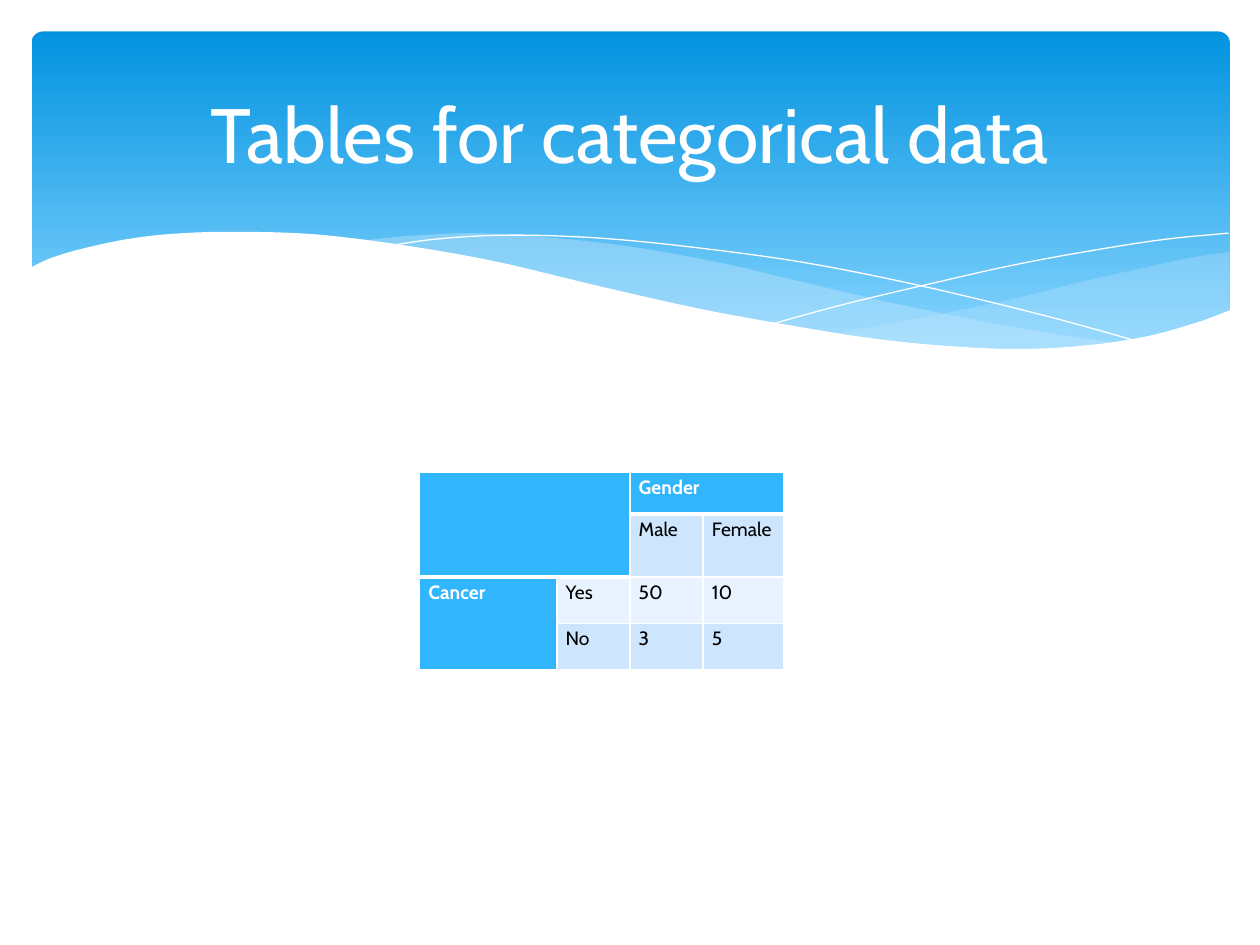
import pptx
import pptx.dml.color
import pptx.enum.dml
import pptx.enum.shapes
import pptx.enum.text
import pptx.oxml.ns
import pptx.util
from lxml import etree

Inches = pptx.util.Inches
Pt = pptx.util.Pt
qn = pptx.oxml.ns.qn

COLORS = {
    "white": "FFFFFF",
    "black": "000000",
    "banner_top": "0293E0",
    "banner_bottom": "83D3FE",
    "ribbon": "C6E7FC",
    "header": "31B6FD",
    "band": "CEE5FE",
    "light_band": "E8F3FF",
}
FONT = "Cabin"

RIGHT_RIBBON_TOP = [(6.61, 2.65), (7.06, 2.57), (7.53, 2.48), (8.05, 2.37),
                    (8.61, 2.23), (9.06, 2.13), (9.48, 2.04), (9.76, 2)]
RIGHT_RIBBON_BOTTOM = [(6.61, 2.65), (7.05, 2.71), (7.57, 2.76), (8.03, 2.78),
                       (8.54, 2.76), (8.97, 2.7), (9.35, 2.62), (9.76, 2.47)]
LONG_RIBBON_TOP = [(2.86, 1.91), (3.28, 1.87), (3.8, 1.85), (4.42, 1.89), (5.02, 1.96),
                   (5.69, 2.08), (6.29, 2.22), (7.06, 2.4), (7.75, 2.54), (8.37, 2.65), (8.93, 2.73)]
LONG_RIBBON_BOTTOM = [(2.86, 1.91), (3.42, 1.99), (4.04, 2.11), (4.91, 2.32), (5.66, 2.48),
                      (6.34, 2.61), (6.95, 2.7), (7.48, 2.76), (8.07, 2.78), (8.57, 2.77), (8.93, 2.73)]
FALLING_STRAND = [(3.09, 1.95), (3.44, 1.9), (3.87, 1.87), (4.33, 1.87), (4.89, 1.9), (5.56, 1.97),
                  (6.36, 2.08), (7.27, 2.26), (8.31, 2.51), (9.07, 2.72)]
RISING_STRAND = [(6.13, 2.57), (6.72, 2.41), (7.48, 2.23), (8.06, 2.1),
                 (8.66, 1.99), (9.24, 1.9), (9.75, 1.85)]
WAVE_TOP = [(0.23, 2.13), (0.4, 2.05), (0.67, 1.97), (1.06, 1.89), (1.46, 1.85), (1.93, 1.84),
            (2.5, 1.86), (3.16, 1.94), (3.91, 2.07), (4.75, 2.27), (5.55, 2.45), (6.26, 2.58),
            (6.88, 2.68), (7.44, 2.74), (8.09, 2.77), (8.63, 2.74), (9.1, 2.67), (9.5, 2.56), (9.77, 2.46)]
WAVE_BOTTOM = [(0.23, 3.29), (9.77, 3.29)]

COLUMN_WIDTHS = [1.09, 0.58, 0.58, 0.64]
ROW_HEIGHTS = [0.33, 0.5, 0.37, 0.37]
TABLE_ROWS = [
    ["", "", "Gender", ""],
    ["", "", "Male", "Female"],
    ["Cancer", "Yes", "50", "10"],
    ["", "No", "3", "5"],
]
MERGES = [((0, 0), (1, 1)), ((0, 2), (0, 3)), ((2, 0), (3, 0))]
HEADER_CELLS = {(0, 0), (0, 1), (0, 2), (0, 3), (1, 0), (1, 1), (2, 0), (3, 0)}
THICK_BELOW = {(0, 2), (0, 3), (0, 0), (1, 0), (1, 1)}


def color(name):
    return pptx.dml.color.RGBColor.from_string(COLORS[name])


def apply_format(target, values):
    for name, value in values.items():
        setattr(target, name, value)


def fill_solid(fill, name):
    fill.solid()
    fill.fore_color.rgb = color(name)


def smooth(knots, steps=5):
    slopes = []
    for i in range(len(knots)):
        (x0, y0), (x1, y1) = knots[max(i - 1, 0)], knots[min(i + 1, len(knots) - 1)]
        slopes.append((y1 - y0) / (x1 - x0))
    points = [knots[0]]
    for (x0, y0), (x1, y1), m0, m1 in zip(knots, knots[1:], slopes, slopes[1:]):
        width = x1 - x0
        for step in range(1, steps + 1):
            t = step / steps
            y = ((2 * t**3 - 3 * t**2 + 1) * y0 + (t**3 - 2 * t**2 + t) * width * m0
                 + (3 * t**2 - 2 * t**3) * y1 + (t**3 - t**2) * width * m1)
            points.append((x0 + t * width, y))
    return points


def add_outline(slide, points, close):
    points = [(Inches(x), Inches(y)) for x, y in points]
    builder = slide.shapes.build_freeform(*points[0])
    builder.add_line_segments(points[1:], close=close)
    shape = builder.convert_to_shape()
    shape.shadow.inherit = False
    return shape


def add_ribbon(slide, top, bottom, fill_name, opacity=100):
    shape = add_outline(slide, top + bottom[::-1], True)
    fill_solid(shape.fill, fill_name)
    shape.line.fill.background()
    if opacity < 100:
        fill_color = shape.fill._xPr.find(qn("a:solidFill"))[0]
        etree.SubElement(fill_color, qn("a:alpha"), val=str(opacity * 1000))


def add_strand(slide, knots):
    shape = add_outline(slide, smooth(knots), False)
    shape.fill.background()
    fill_solid(shape.line.fill, "white")
    shape.line.width = Pt(0)


def add_banner(slide):
    shape = slide.shapes.add_shape(pptx.enum.shapes.MSO_SHAPE.ROUNDED_RECTANGLE,
                                   Inches(0.25), Inches(0.25), Inches(9.51), Inches(2.7))
    shape.adjustments[0] = 0.034
    shape.shadow.inherit = False
    shape.line.fill.background()
    shape.fill.gradient()
    shape.fill.gradient_angle = 270
    stops = [(0, "banner_top"), (0.9, "banner_bottom")]
    for stop, (position, name) in zip(shape.fill.gradient_stops, stops):
        stop.position = position
        stop.color.rgb = color(name)


def add_title(slide, text):
    box = slide.shapes.add_textbox(Inches(0.5), Inches(0.37), Inches(9), Inches(1.37))
    apply_format(box.text_frame, {"word_wrap": True,
                                  "vertical_anchor": pptx.enum.text.MSO_ANCHOR.MIDDLE})
    paragraph = box.text_frame.paragraphs[0]
    paragraph.alignment = pptx.enum.text.PP_ALIGN.CENTER
    run = paragraph.add_run()
    run.text = text
    apply_format(run.font, {"name": FONT, "size": Pt(44)})
    run.font.color.rgb = color("white")


def add_borders(cell, row, column):
    widths = {"lnL": 1, "lnR": 1,
              "lnT": 3 if (row - 1, column) in THICK_BELOW else 1,
              "lnB": 3 if (row, column) in THICK_BELOW else 1}
    properties = cell._tc.get_or_add_tcPr()
    for tag, width in widths.items():
        line = etree.SubElement(properties, qn("a:" + tag), w=str(Pt(width)))
        fill = etree.SubElement(line, qn("a:solidFill"))
        etree.SubElement(fill, qn("a:srgbClr"), val=COLORS["white"])


def format_cell(cell, row, column, text):
    is_header = (row, column) in HEADER_CELLS
    apply_format(cell, {"margin_left": Inches(0.07), "margin_right": Inches(0.07),
                        "margin_top": 0, "margin_bottom": 0})
    add_borders(cell, row, column)
    body_fill = "light_band" if row == 2 else "band"
    fill_solid(cell.fill, "header" if is_header else body_fill)
    paragraph = cell.text_frame.paragraphs[0]
    paragraph.line_spacing = 1.15
    if text:
        run = paragraph.add_run()
        run.text = text
        apply_format(run.font, {"name": FONT, "size": Pt(11), "bold": is_header})
        run.font.color.rgb = color("white" if is_header else "black")
    else:
        etree.SubElement(paragraph._p, qn("a:endParaRPr"), sz="1100")


def add_data_table(slide):
    frame = slide.shapes.add_table(len(ROW_HEIGHTS), len(COLUMN_WIDTHS), Inches(3.33), Inches(3.75),
                                   Inches(sum(COLUMN_WIDTHS)), Inches(sum(ROW_HEIGHTS)))
    table = frame.table
    apply_format(table, {"first_row": False, "horz_banding": False})
    for column, width in zip(table.columns, COLUMN_WIDTHS):
        column.width = Inches(width)
    for row, height in zip(table.rows, ROW_HEIGHTS):
        row.height = Inches(height)
    for row, texts in enumerate(TABLE_ROWS):
        for column, text in enumerate(texts):
            format_cell(table.cell(row, column), row, column, text)
    for first, last in MERGES:
        table.cell(*first).merge(table.cell(*last))


def main():
    presentation = pptx.Presentation()
    apply_format(presentation, {"slide_width": Inches(10), "slide_height": Inches(7.5)})
    slide = presentation.slides.add_slide(presentation.slide_layouts[6])
    add_banner(slide)
    add_ribbon(slide, smooth(RIGHT_RIBBON_TOP), smooth(RIGHT_RIBBON_BOTTOM), "ribbon", 29)
    add_ribbon(slide, smooth(LONG_RIBBON_TOP), smooth(LONG_RIBBON_BOTTOM), "ribbon", 40)
    add_strand(slide, FALLING_STRAND)
    add_strand(slide, RISING_STRAND)
    add_ribbon(slide, smooth(WAVE_TOP), WAVE_BOTTOM, "white")
    add_data_table(slide)
    add_title(slide, "Tables for categorical data")
    presentation.save("out.pptx")


if __name__ == "__main__":
    main()
